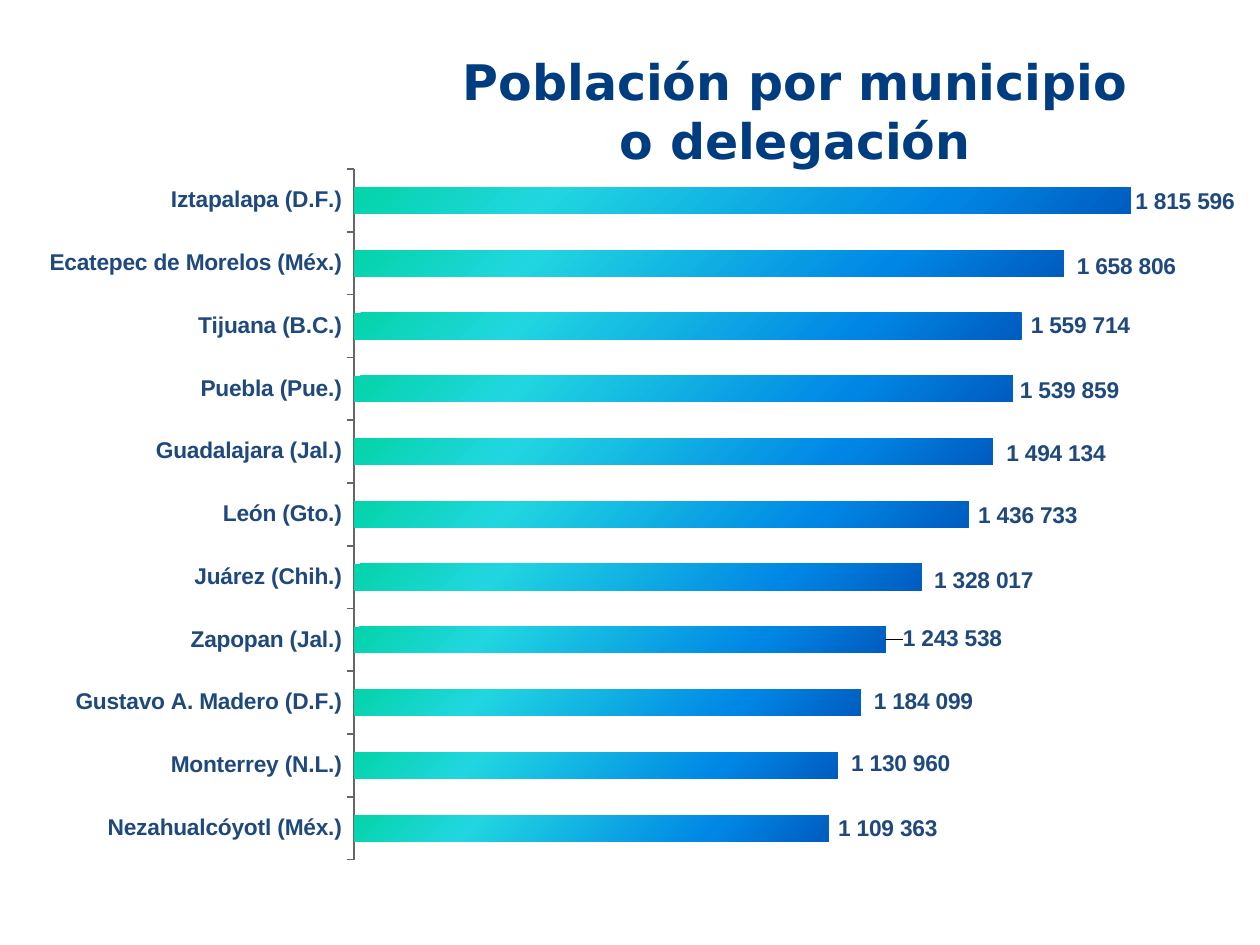
import copy
import dataclasses
import typing

import lxml.etree
import pptx
import pptx.chart.data
import pptx.dml.color
import pptx.enum.chart
import pptx.enum.text
import pptx.oxml.ns
import pptx.util

Cm = pptx.util.Cm
Pt = pptx.util.Pt
qn = pptx.oxml.ns.qn

HUES = {
    "title": "003D80",
    "label": "1F497D",
    "axis": "666666",
    "mint": "03D4A8",
    "aqua": "21D6E0",
    "blue": "0087E6",
    "navy": "005CBF",
}
STOPS = ((0, "mint"), (25, "aqua"), (75, "blue"), (100, "navy"))
MASK = "###\\ ###\\ ###"
HEAD = {"name": "DejaVu Sans", "size": Pt(28), "bold": True}
LABEL = {"name": "Arial", "size": Pt(13), "bold": True}
BASE = {"name": "DejaVu Sans", "size": Pt(10)}
FRAME = {"x": 0.27, "y": 0.02, "w": 0.71, "h": 0.96}


@dataclasses.dataclass
class Town:
    name: str
    count: int
    right: float
    down: float


TOWNS = [
    Town("Iztapalapa (D.F.)", 1815596, 0, 0.3),
    Town("Ecatepec de Morelos (Méx.)", 1658806, 0.7, 0.6),
    Town("Tijuana (B.C.)", 1559714, 0.4, 0),
    Town("Puebla (Pue.)", 1539859, 0.2, 0.3),
    Town("Guadalajara (Jal.)", 1494134, 0.7, 0.4),
    Town("León (Gto.)", 1436733, 0.4, 0.3),
    Town("Juárez (Chih.)", 1328017, 0.6, 0.6),
    Town("Zapopan (Jal.)", 1243538, 1, -0.1),
    Town("Gustavo A. Madero (D.F.)", 1184099, 0.7, -0.1),
    Town("Monterrey (N.L.)", 1130960, 0.7, -0.1),
    Town("Nezahualcóyotl (Méx.)", 1109363, 0.4, 0.1),
]


def apply(item: typing.Any, form: dict) -> None:
    for key, val in form.items():
        setattr(item, key, val)


def paint(font: typing.Any, form: dict, hue: str) -> None:
    apply(font, form)
    font.color.rgb = pptx.dml.color.RGBColor.from_string(HUES[hue])


def node(tag: str, **vals: typing.Any) -> typing.Any:
    item = lxml.etree.Element(qn(tag))
    for key, val in vals.items():
        item.set(key, str(val))
    return item


def layout(vals: dict, inner: bool = False) -> typing.Any:
    outer, manual = node("c:layout"), node("c:manualLayout")
    outer.append(manual)
    if inner:
        for tag, val in (("layoutTarget", "inner"), ("xMode", "edge"), ("yMode", "edge")):
            manual.append(node("c:" + tag, val=val))
    for key, val in vals.items():
        manual.append(node("c:" + key, val=val))
    return outer


def add_title(slide: typing.Any) -> None:
    title = slide.shapes.title
    apply(title, {"left": Cm(6.65), "top": Cm(1.04), "width": Cm(18.75), "height": Cm(2.72)})
    frame = title.text_frame
    apply(frame, {
        "margin_left": 0, "margin_right": 0, "margin_top": 0, "margin_bottom": 0,
        "word_wrap": True,
        "auto_size": pptx.enum.text.MSO_AUTO_SIZE.NONE,
        "vertical_anchor": pptx.enum.text.MSO_ANCHOR.TOP,
    })
    frame.text = "Población por municipio\vo delegación"
    para = frame.paragraphs[0]
    para.alignment = pptx.enum.text.PP_ALIGN.CENTER
    for run in para.runs:
        paint(run.font, HEAD, "title")
    para._p.find(qn("a:br")).insert(0, copy.deepcopy(para.runs[0]._r.rPr))


def fill_bars(bars: typing.Any) -> None:
    fill = bars.format.fill
    fill.gradient()
    fill.gradient_angle = 315
    stops = bars._element.spPr.find(".//" + qn("a:gsLst"))
    stops.clear()
    for spot, hue in STOPS:
        stop = node("a:gs", pos=spot * 1000)
        stop.append(node("a:srgbClr", val=HUES[hue]))
        stops.append(stop)


def add_labels(plot: typing.Any, bars: typing.Any) -> None:
    place = pptx.enum.chart.XL_LABEL_POSITION.OUTSIDE_END
    labels = bars.data_labels
    apply(labels, {
        "show_value": True, "number_format": MASK,
        "number_format_is_linked": False, "position": place,
    })
    paint(labels.font, LABEL, "label")
    for spot, town in enumerate(TOWNS):
        label = bars.points[spot].data_label
        paint(label.font, LABEL, "label")
        label.position = place
        mark = labels._element.findall(qn("c:dLbl"))[spot]
        mark.insert(1, layout({"x": town.right / 100, "y": town.down / 100}))
        mark.insert(2, node("c:numFmt", formatCode=MASK, sourceLinked=0))


def add_chart(slide: typing.Any) -> None:
    data = pptx.chart.data.CategoryChartData(number_format=MASK)
    data.categories = [town.name for town in TOWNS]
    data.add_series("Series 1", [town.count for town in TOWNS])
    kind = pptx.enum.chart.XL_CHART_TYPE.BAR_CLUSTERED
    chart = slide.shapes.add_chart(
        kind, Cm(0.58), Cm(3.12), Cm(24.33), Cm(14.5), data).chart
    apply(chart, {"has_legend": False, "has_title": False})
    apply(chart.font, BASE)
    tick = pptx.enum.chart.XL_TICK_MARK
    rows = chart.category_axis
    apply(rows, {
        "reverse_order": True, "major_tick_mark": tick.OUTSIDE,
        "minor_tick_mark": tick.NONE, "has_major_gridlines": False,
    })
    paint(rows.tick_labels.font, LABEL, "label")
    line = rows.format.line
    line.width = Pt(1)
    line.color.rgb = pptx.dml.color.RGBColor.from_string(HUES["axis"])
    apply(chart.value_axis, {
        "visible": False, "has_major_gridlines": False,
        "minimum_scale": 0, "maximum_scale": 2000000,
    })
    plot = chart.plots[0]
    apply(plot, {"gap_width": 140, "vary_by_categories": False})
    bars = plot.series[0]
    fill_bars(bars)
    add_labels(plot, bars)
    area = chart._chartSpace.find(".//" + qn("c:plotArea"))
    for old in area.findall(qn("c:layout")):
        area.remove(old)
    area.insert(0, layout(FRAME, True))


def main() -> None:
    deck = pptx.Presentation()
    apply(deck, {"slide_width": Cm(25.4), "slide_height": Cm(19.05)})
    slide = deck.slides.add_slide(deck.slide_layouts[5])
    add_title(slide)
    add_chart(slide)
    deck.save("out.pptx")


if __name__ == "__main__":
    main()
